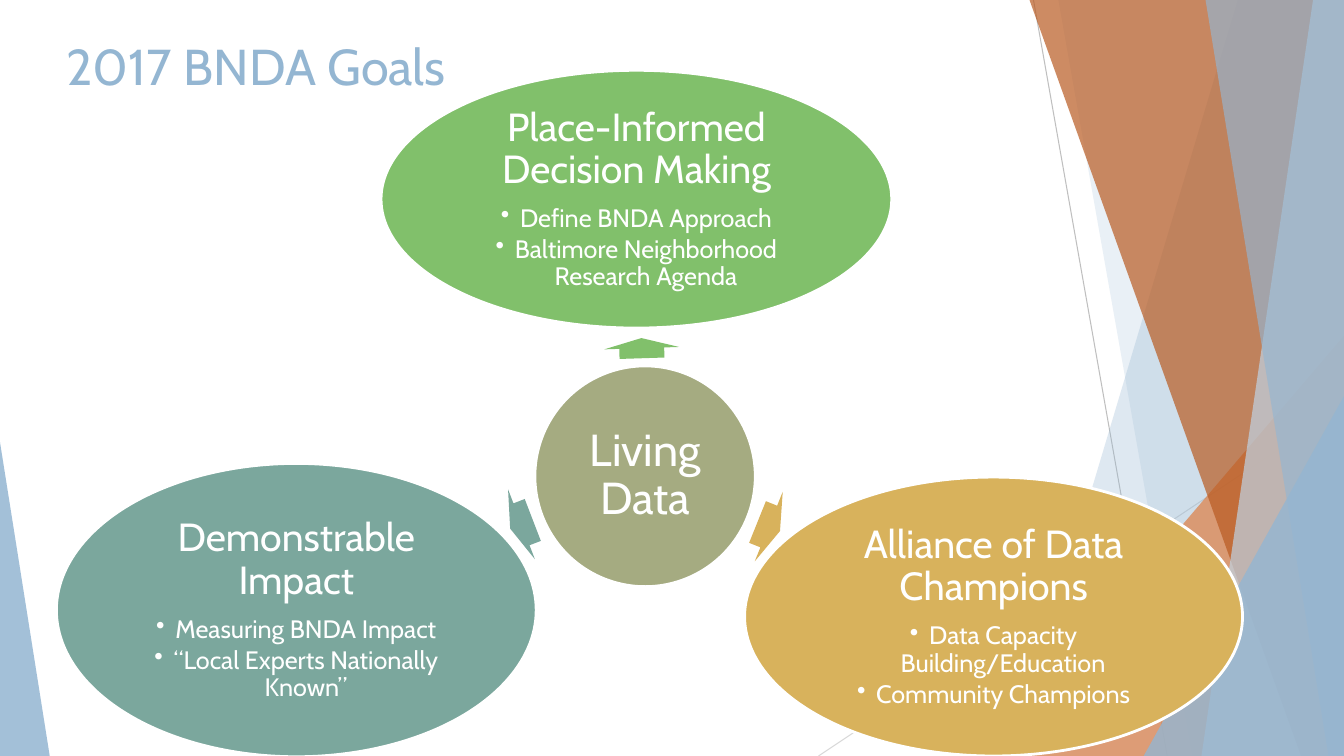
"""Build the 2017 goals slide: a hub circle with three goal ellipses."""
from lxml.etree import SubElement
from pptx import Presentation
from pptx.dml.color import RGBColor as RGB
from pptx.enum.shapes import MSO_CONNECTOR as LINK, MSO_SHAPE as SHAPE
from pptx.enum.text import MSO_ANCHOR as ANCHOR, MSO_AUTO_SIZE as FIT, PP_ALIGN as ALIGN
from pptx.oxml.ns import qn
from pptx.util import Inches, Pt

HUES = {
    "sky": "94B6D2", "pale": "BFD3E4", "rust": "B95B22", "orange": "DD8047",
    "sage": "A5AB81", "gold": "D8B25C", "green": "81C06B", "teal": "7BA79D",
    "white": "FFFFFF", "gray": "BFBFBF", "mist": "D9D9D9",
}
FONT = "Cabin"

deck = Presentation()
deck.slide_width, deck.slide_height = Inches(13.333), Inches(7.5)
COL, ROW = deck.slide_width / 100, deck.slide_height / 100
slide = deck.slides.add_slide(deck.slide_layouts[5])
shapes = slide.shapes


def paint(shape, hue, alpha=100, edge=0):
    shape.shadow.inherit = False
    shape.fill.solid()
    shape.fill.fore_color.rgb = RGB.from_string(HUES[hue])
    if alpha < 100:
        tone = shape.fill._xPr.find(qn("a:solidFill"))[0]
        SubElement(tone, qn("a:alpha"), val=str(alpha * 1000))
    if edge:
        shape.line.color.rgb = RGB.from_string(HUES["white"])
        shape.line.width = Pt(edge)
    else:
        shape.line.fill.background()


def write(par, text, size, hue):
    run = par.add_run()
    run.text = text
    run.font.name, run.font.size = FONT, Pt(size)
    run.font.color.rgb = RGB.from_string(HUES[hue])


for x1, y1, x2, y2, hue in [
    (76.9, 0, 86.85, 100, "gray"),
    (100, 53.7, 60.9, 100, "mist"),
]:
    line = shapes.add_connector(
        LINK.STRAIGHT, int(x1 * COL), int(y1 * ROW), int(x2 * COL), int(y2 * ROW))
    line.line.color.rgb = RGB.from_string(HUES[hue])
    line.line.width = Pt(0.75)
    SubElement(line._element.spPr, qn("a:effectLst"))

# fmt: off
for kind, hue, alpha, dims in [
    ("band", "sky", 30, (92.1, 75.3)),
    ("band", "sky", 20, (78.75, 88.7)),
    ("wedge", "orange", 72, (73.3, 44.4, 26.7, 1)),
    ("band", "rust", 70, (76.6, 96.8)),
    ("band", "pale", 70, (97.7, 89.4)),
    ("band", "sky", 65, (89.7, 98.85)),
    ("wedge", "sky", 80, (85.1, 52.4, 14.9, 1)),
    ("wedge", "sky", 85, (0, 58.5, 3.7, 0)),
]:
    if kind == "band":
        top, base = dims
        pen = shapes.build_freeform(int(top * COL), 0)
        pen.add_line_segments(
            [(int(x * COL), int(y * ROW)) for x, y in [(100, 0), (100, 100), (base, 100)]])
        part = pen.convert_to_shape()
    else:
        left, top, wide, tip = dims
        part = shapes.add_shape(
            SHAPE.ISOSCELES_TRIANGLE, int(left * COL), int(top * ROW),
            int(wide * COL), int((100 - top) * ROW))
        part.adjustments[0] = tip
    paint(part, hue, alpha)

title = shapes.title
title.left, title.top = int(4.2 * COL), int(4 * ROW)
title.width, title.height = int(90.8 * COL), int(15 * ROW)
frame = title.text_frame
frame.auto_size, frame.vertical_anchor = FIT.NONE, ANCHOR.TOP
frame.paragraphs[0].alignment = ALIGN.LEFT
write(frame.paragraphs[0], "2017 BNDA Goals", 36, "sky")

goals = [
    ("sage", (39.8, 48.4, 16.4, 29.2), None, 32, "Living Data", []),
    ("gold", (55.4, 63.1, 37.05, 36.9), (56.3, 64.7, 1.8, 21.9), 28,
     "Alliance of Data Champions",
     ["Data Capacity Building/Education", "Community Champions"]),
    ("green", (28.35, 9.3, 38, 34.1), (47, 41.1, 1.5, 268.2), 28,
     "Place-Informed Decision Making",
     ["Define BNDA Approach", "Baltimore Neighborhood Research Agenda"]),
    ("teal", (4.2, 61.3, 35.7, 38.8), (37.9, 64.4, 1.8, 159), 28,
     "Demonstrable Impact",
     ["Measuring BNDA Impact", "“Local Experts Nationally Known”"]),
]
for hue, (left, top, wide, high), dart, size, head, items in goals:
    if dart:
        x, y, span, turn = dart
        arrow = shapes.add_shape(
            SHAPE.RIGHT_ARROW, int(x * COL), int(y * ROW), int(span * COL), int(9.9 * ROW))
        arrow.adjustments[0], arrow.adjustments[1] = 0.6, 0.5
        arrow.rotation = turn
        paint(arrow, hue)
    oval = shapes.add_shape(
        SHAPE.OVAL, int(left * COL), int(top * ROW), int(wide * COL), int(high * ROW))
    paint(oval, hue, edge=2)
    frame = oval.text_frame
    frame.word_wrap, frame.vertical_anchor = True, ANCHOR.MIDDLE
    frame.margin_left = frame.margin_right = Inches(0.04)
    frame.margin_top = frame.margin_bottom = Inches(0.04)
    for rank, text in enumerate([head, *items]):
        par = frame.add_paragraph() if rank else frame.paragraphs[0]
        par.alignment, par.line_spacing = ALIGN.CENTER, 0.9
        par.space_after = Pt(2.7 if rank else 10)
        if rank:
            par.level = 1
            props = par._p.get_or_add_pPr()
            props.set("marL", str(Inches(0.19)))
            props.set("indent", str(-Inches(0.19)))
            SubElement(props, qn("a:buChar"), char="•")
        write(par, text, 18 if rank else size, "white")

deck.save("out.pptx")
